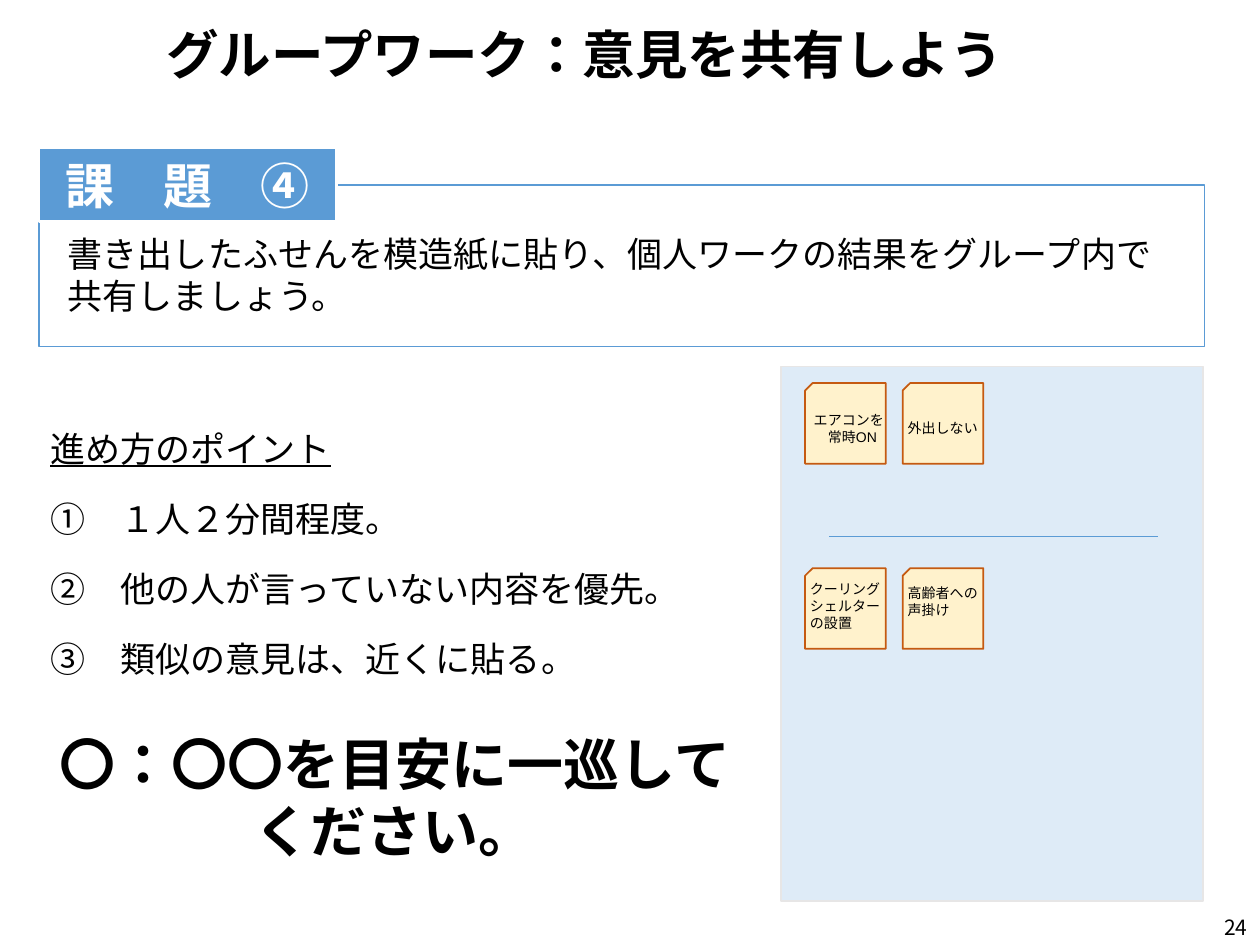
from collections import namedtuple

from lxml.etree import SubElement
from pptx import Presentation
from pptx.dml.color import RGBColor
from pptx.enum.lang import MSO_LANGUAGE_ID
from pptx.enum.shapes import MSO_CONNECTOR, MSO_SHAPE
from pptx.enum.text import MSO_ANCHOR, PP_ALIGN
from pptx.oxml.ns import qn
from pptx.util import Inches, Pt

BLACK = RGBColor(0x00, 0x00, 0x00)
WHITE = RGBColor(0xFF, 0xFF, 0xFF)
BLUE = RGBColor(0x5B, 0x9B, 0xD5)
PALE_BLUE = RGBColor(0xDE, 0xEB, 0xF7)
GREY = RGBColor(0xE7, 0xE6, 0xE6)
CREAM = RGBColor(0xFF, 0xF2, 0xCC)
ORANGE = RGBColor(0xC5, 0x5A, 0x11)

LATIN = "Arial"
JAPANESE = "Noto Sans CJK JP"

WIDTH, HEIGHT = Inches(10), Inches(7.5)
COLUMN, ROW = WIDTH / 100, HEIGHT / 75

Box = namedtuple("Box", "left top width height")


def on_grid(box):
    return (round(box.left * COLUMN), round(box.top * ROW),
            round(box.width * COLUMN), round(box.height * ROW))


def write(frame, lines, size, name=LATIN, color=BLACK, anchor=MSO_ANCHOR.TOP,
          paragraph_format=None, **font_format):
    frame.word_wrap = True
    frame.vertical_anchor = anchor
    font_values = {"size": Pt(size), "name": name,
                   "language_id": MSO_LANGUAGE_ID.JAPANESE, **font_format}
    for index, line in enumerate(lines):
        para = frame.add_paragraph() if index else frame.paragraphs[0]
        para.text = line
        for key, value in (paragraph_format or {}).items():
            setattr(para, key, value)
        for span in para.runs:
            for key, value in font_values.items():
                setattr(span.font, key, value)
            span.font.color.rgb = color
            properties = span._r.get_or_add_rPr()
            SubElement(properties, qn("a:ea")).set("typeface", name)


def add_text(shapes, box, lines, size, **formats):
    text_box = shapes.add_textbox(*on_grid(box))
    write(text_box.text_frame, lines, size, **formats)
    return text_box


def add_panel(shapes, box, fill, line, weight, kind=MSO_SHAPE.RECTANGLE):
    panel = shapes.add_shape(kind, *on_grid(box))
    panel.shadow.inherit = False
    if fill is None:
        panel.fill.background()
    else:
        panel.fill.solid()
        panel.fill.fore_color.rgb = fill
    panel.line.color.rgb = line
    panel.line.width = Pt(weight)
    return panel


def add_task(shapes, box):
    add_panel(shapes, box, None, BLUE, 1)
    tab = add_panel(shapes, Box(box.left, box.top - 3, 23.6, 5.9), BLUE, WHITE, 1.5)
    write(tab.text_frame, ["課　題　④"], 28, color=WHITE, bold=True,
          anchor=MSO_ANCHOR.MIDDLE, paragraph_format={"alignment": PP_ALIGN.CENTER})
    add_text(shapes, Box(box.left + 1.3, box.top + 3.3, box.width - 3.3, 7.7),
             ["書き出したふせんを模造紙に貼り、個人ワークの結果をグループ内で共有しましょう。"], 20)


def add_points(shapes, box):
    points = ["①　１人２分間程度。", "②　他の人が言っていない内容を優先。",
              "③　類似の意見は、近くに貼る。"]
    text_box = add_text(shapes, box, ["進め方のポイント", *points], 20,
                        paragraph_format={"line_spacing": Pt(40)})
    text_box.text_frame.paragraphs[0].runs[0].font.underline = True


def add_note(shapes, box):
    note = add_panel(shapes, box, CREAM, ORANGE, 1, MSO_SHAPE.SNIP_1_RECTANGLE)
    note.adjustments[0] = 0.093
    note._element.spPr.find(qn("a:xfrm")).set("flipH", "1")


def add_board(shapes, box):
    add_panel(shapes, box, PALE_BLUE, GREY, 1)
    divider_top = round((box.top + 13.5) * ROW)
    divider = shapes.add_connector(
        MSO_CONNECTOR.STRAIGHT, round((box.left + 3.8) * COLUMN), divider_top,
        round((box.left + 29.9) * COLUMN), divider_top)
    divider.line.color.rgb = BLUE
    divider.line.width = Pt(0.5)
    SubElement(divider._element.spPr, qn("a:effectLst"))

    note_rows = [
        [("エアコンを\v　常時ON", -0.3, 1.8, 3.7), ("外出しない", -0.6, 2.4, 2.4)],
        [("クーリングシェルターの設置", -0.6, 0.5, 5), ("高齢者への声掛け", -0.6, 0.8, 3.7)],
    ]
    for row, notes in enumerate(note_rows):
        group = shapes.add_group_shape()
        spots = [Box(box.left + 1.9 + 7.75 * column, box.top + 1.3 + 14.7 * row, 6.4, 6.4)
                 for column in range(len(notes))]
        for spot in spots:
            add_note(group.shapes, spot)
        for spot, (label, shift, drop, height) in zip(spots, notes):
            add_text(group.shapes, Box(spot.left + shift, spot.top + drop, 7.9, height),
                     [label], 8)


def main():
    deck = Presentation()
    deck.slide_width, deck.slide_height = WIDTH, HEIGHT
    page = deck.slides.add_slide(deck.slide_layouts[6])
    shapes = page.shapes

    add_text(shapes, Box(12.2, -0.3, 87.8, 7.6), ["グループワーク：意見を共有しよう"], 30,
             name=JAPANESE, bold=True, anchor=MSO_ANCHOR.BOTTOM,
             paragraph_format={"line_spacing": 0.9})
    add_task(shapes, Box(3.1, 14.7, 92.5, 12.8))
    add_board(shapes, Box(62, 29.1, 33.5, 42.4))
    add_text(shapes, Box(3.1, 57.4, 56.4, 11.8), ["〇：〇〇を目安に一巡してください。"], 32,
             bold=True, paragraph_format={"alignment": PP_ALIGN.CENTER})
    add_points(shapes, Box(3, 31.2, 58.1, 23.4))
    add_text(shapes, Box(91, 72.3, 9, 2.7), ["24"], 12, name=JAPANESE,
             paragraph_format={"alignment": PP_ALIGN.RIGHT, "line_spacing": Pt(13)})

    deck.save("out.pptx")


if __name__ == "__main__":
    main()
